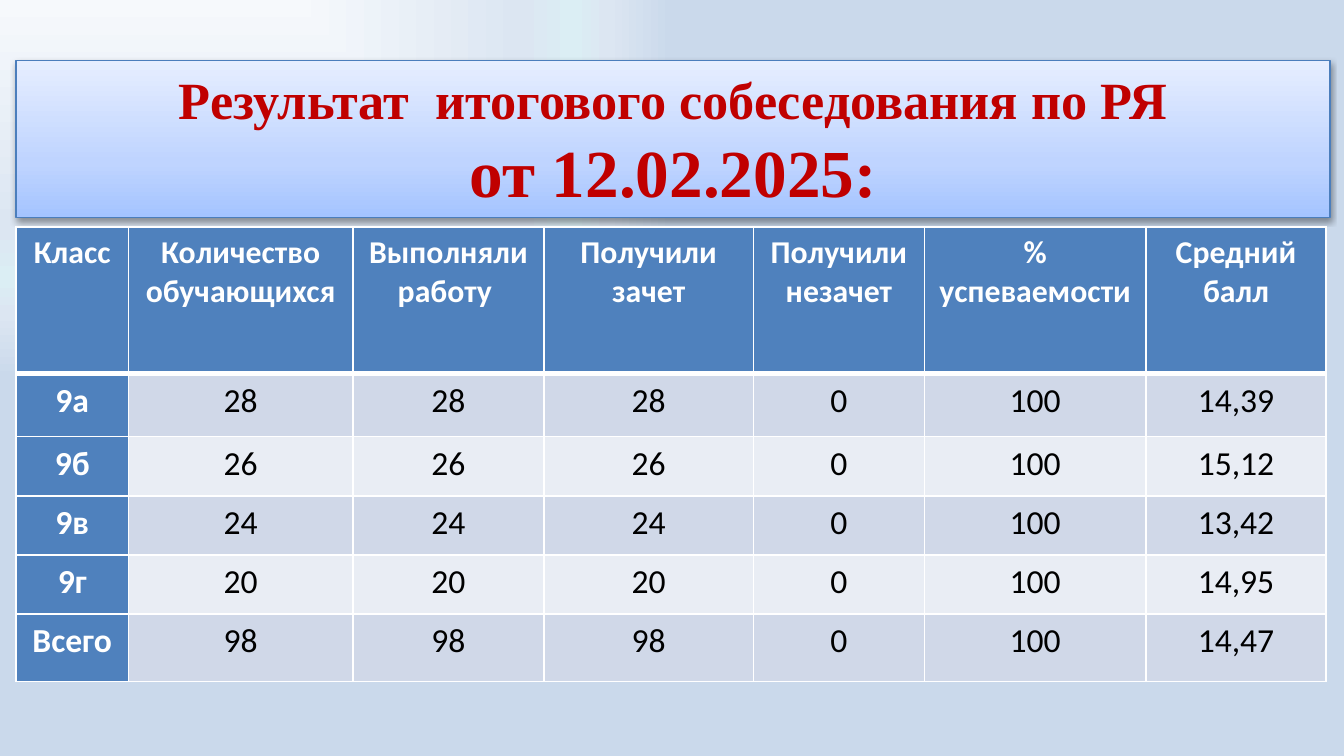
from dataclasses import dataclass

from lxml.etree import SubElement
from pptx import Presentation
from pptx.dml.color import RGBColor
from pptx.enum.shapes import MSO_SHAPE
from pptx.enum.text import MSO_ANCHOR, PP_ALIGN
from pptx.oxml import parse_xml
from pptx.oxml.ns import nsdecls, qn
from pptx.util import Cm, Pt


@dataclass(frozen=True)
class Theme:
    backdrop: tuple = ((0, "F6F9FC"), (60, "DCE6F2"), (74, "DBEEF4"),
                       (83, "DCE6F2"), (100, "CAD9EB"))
    banner: tuple = ((0, "A4C4FF"), (35, "BFD4FF"), (100, "E6EEFF"))
    banner_edge: str = "4B7EBC"
    title: str = "C00000"
    header: str = "4F81BD"
    bands: tuple = ("D0D8E8", "E9EDF4")
    light: str = "FFFFFF"
    dark: str = "000000"
    title_font: str = "Times New Roman"
    table_font: str = "Calibri"
    title_sizes: tuple = (28, 36)
    header_size: int = 17
    body_size: int = 18
    rule: int = 1
    header_rule: int = 3


THEME = Theme()

TITLE = ("Результат  итогового собеседования по РЯ", "от 12.02.2025:")
HEADINGS = ("Класс", "Количество обучающихся", "Выполняли работу ", "Получили зачет",
            "Получили незачет", "% успеваемости", "Средний балл")
# Class, pupils and average score; every pupil took part and passed.
RESULTS = (("9а", 28, "14,39"), ("9б", 26, "15,12"), ("9в", 24, "13,42"),
           ("9г", 20, "14,95"), ("Всего", 98, "14,47"))
COLUMN_WIDTHS = (2.13, 4.24, 3.61, 3.96, 3.23, 4.19, 3.4)
ROW_HEIGHTS = (2.77, 1.19, 1.12, 1.12, 1.12, 1.27)


def set_gradient(fill, owner, stops, direction):
    """Give the fill of the owner element any number of stops and a direction."""
    fill.gradient()
    gradient = next(owner.iter(qn("a:gradFill")))
    stop_xml = "".join(
        f'<a:gs pos="{position * 1000}"><a:srgbClr val="{color}"/></a:gs>'
        for position, color in stops)
    gradient.getparent().replace(gradient, parse_xml(
        f'<a:gradFill {nsdecls("a")} rotWithShape="1">'
        f"<a:gsLst>{stop_xml}</a:gsLst>{direction}</a:gradFill>"))


def set_shadow(shape):
    shape.shadow.inherit = False
    effects = shape.element.spPr.find(qn("a:effectLst"))
    effects.append(parse_xml(
        f'<a:outerShdw {nsdecls("a")} blurRad="{Pt(3.1)}" dist="{Pt(1.6)}" '
        'dir="5400000" rotWithShape="0"><a:srgbClr val="000000">'
        '<a:alpha val="38000"/></a:srgbClr></a:outerShdw>'))


def format_paragraph(paragraph, font_name, size, color, bold):
    paragraph.alignment = PP_ALIGN.CENTER
    for run in paragraph.runs:
        run.font.name = font_name
        run.font.size = Pt(size)
        run.font.bold = bold
        run.font.color.rgb = RGBColor.from_string(color)


def add_title(slide):
    banner = slide.shapes.add_shape(
        MSO_SHAPE.RECTANGLE, Cm(0.3), Cm(1.14), Cm(24.84), Cm(2.97))
    set_gradient(banner.fill, banner.element.spPr, THEME.banner,
                 '<a:lin ang="16200000" scaled="0"/>')
    banner.line.color.rgb = RGBColor.from_string(THEME.banner_edge)
    banner.line.width = Pt(0.75)
    set_shadow(banner)
    frame = banner.text_frame
    frame.word_wrap = True
    frame.vertical_anchor = MSO_ANCHOR.MIDDLE
    frame.text = "\n".join(TITLE)
    for paragraph, size in zip(frame.paragraphs, THEME.title_sizes):
        format_paragraph(paragraph, THEME.title_font, size, THEME.title, True)


def set_borders(cell, top, bottom):
    """Draw all four borders, with their own widths above and below."""
    properties = cell._tc.get_or_add_tcPr()
    widths = {"a:lnL": THEME.rule, "a:lnR": THEME.rule, "a:lnT": top, "a:lnB": bottom}
    for side, width in widths.items():
        border = SubElement(properties, qn(side), w=str(Pt(width)))
        color = SubElement(border, qn("a:solidFill"))
        SubElement(color, qn("a:srgbClr"), val=THEME.light)


def fill_cell(cell, text, row, column):
    is_header = row == 0
    is_label = is_header or column == 0
    set_borders(cell,
                top=THEME.header_rule if row == 1 else THEME.rule,
                bottom=THEME.header_rule if is_header else THEME.rule)
    cell.fill.solid()
    cell.fill.fore_color.rgb = RGBColor.from_string(
        THEME.header if is_label else THEME.bands[(row - 1) % 2])
    cell.text_frame.text = str(text)
    format_paragraph(cell.text_frame.paragraphs[0], THEME.table_font,
                     THEME.header_size if is_header else THEME.body_size,
                     THEME.light if is_label else THEME.dark, is_label)


def add_results(slide):
    rows = [HEADINGS] + [(group, pupils, pupils, pupils, 0, 100, score)
                         for group, pupils, score in RESULTS]
    results = slide.shapes.add_table(
        len(rows), len(HEADINGS), Cm(0.3), Cm(4.29),
        Cm(sum(COLUMN_WIDTHS)), Cm(sum(ROW_HEIGHTS))).table
    for column, width in zip(results.columns, COLUMN_WIDTHS):
        column.width = Cm(width)
    for table_row, height in zip(results.rows, ROW_HEIGHTS):
        table_row.height = Cm(height)
    for row, texts in enumerate(rows):
        for column, text in enumerate(texts):
            fill_cell(results.cell(row, column), text, row, column)


def main():
    presentation = Presentation()
    presentation.slide_width = Cm(25.4)
    presentation.slide_height = Cm(14.29)
    slide = presentation.slides.add_slide(presentation.slide_layouts[6])
    set_gradient(slide.background.fill, slide.element, THEME.backdrop,
                 '<a:path path="rect"><a:fillToRect r="100000" b="100000"/></a:path>')
    add_title(slide)
    add_results(slide)
    presentation.save("out.pptx")


if __name__ == "__main__":
    main()
